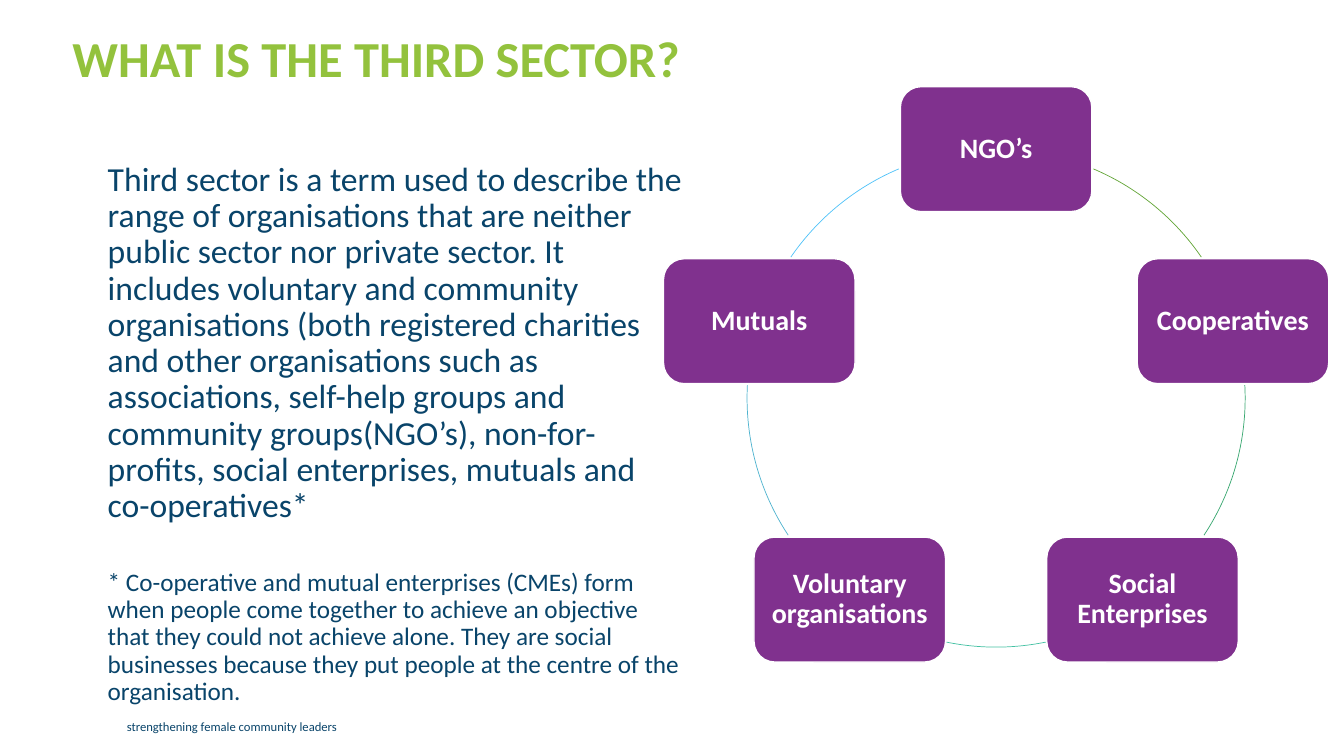
from dataclasses import dataclass
from math import cos, radians, sin

from pptx import Presentation
from pptx.dml.color import RGBColor
from pptx.enum.shapes import MSO_SHAPE
from pptx.enum.text import MSO_ANCHOR, PP_ALIGN
from pptx.util import Inches, Pt

ROUND = MSO_SHAPE.ROUNDED_RECTANGLE
ARC = MSO_SHAPE.ARC
MIDDLE = MSO_ANCHOR.MIDDLE
CENTER = PP_ALIGN.CENTER


@dataclass(frozen=True)
class Theme:
    font: str = "Calibri"
    navy: str = "09446A"
    lime: str = "93C23D"
    plum: str = "80318E"
    white: str = "FFFFFF"
    title: int = 36
    body: int = 24
    label: int = 20
    note: int = 18
    foot: int = 9


THEME = Theme()

TERM = (
    "Third sector is a term used to describe the range of organisations that "
    "are neither public sector nor private sector. It includes voluntary and "
    "community organisations (both registered charities and other "
    "organisations such as associations, self-help groups and community "
    "groups(NGO’s), non-for-profits, social enterprises, mutuals and "
    "co-operatives*"
)
NOTE = (
    "* Co-operative and mutual enterprises (CMEs) form when people come "
    "together to achieve an objective that they could not achieve alone. "
    "They are social businesses because they put people at the centre of the "
    "organisation."
)

# Label, then the arc that follows it: start and end in degrees from the top
RING = [
    ("NGO’s", 23, 55.5, "63A537"),
    ("Cooperatives", 87, 123.4, "37A76F"),
    ("Social Enterprises", 168.5, 191.5, "44C1A3"),
    ("Voluntary organisations", 236.6, 273, "4EB3CF"),
    ("Mutuals", 304.5, 337, "51C3F9"),
]
MID_X, MID_Y, RADIUS = 9.88, 3.95, 2.47
BOX_W, BOX_H = 1.9, 1.24


def rgb(code):
    return RGBColor.from_string(code)


def write(para, text, size, color, bold=False, **layout):
    para.text = text
    for name, value in layout.items():
        setattr(para, name, value)
    style = {"name": THEME.font, "size": Pt(size), "bold": bold}
    for name, value in style.items():
        setattr(para.font, name, value)
    para.font.color.rgb = rgb(color)


def add_text(slide, place, wrap=True):
    frame = slide.shapes.add_textbox(*map(Inches, place)).text_frame
    frame.word_wrap = wrap
    return frame


def add_box(slide, x, y, text):
    box = slide.shapes.add_shape(
        ROUND, Inches(x - BOX_W / 2), Inches(y - BOX_H / 2),
        Inches(BOX_W), Inches(BOX_H))
    box.shadow.inherit = False
    box.fill.solid()
    box.fill.fore_color.rgb = rgb(THEME.plum)
    box.line.color.rgb = rgb(THEME.white)
    box.line.width = Pt(1)
    frame = box.text_frame
    frame.word_wrap = True
    frame.vertical_anchor = MIDDLE
    for side in ("left", "top", "right", "bottom"):
        setattr(frame, f"margin_{side}", Inches(0.08))
    write(frame.paragraphs[0], text, THEME.label, THEME.white, True,
          alignment=CENTER, line_spacing=0.9)


def add_arc(slide, start, end, color):
    arc = slide.shapes.add_shape(
        ARC, Inches(MID_X - RADIUS), Inches(MID_Y - RADIUS),
        Inches(2 * RADIUS), Inches(2 * RADIUS))
    arc.shadow.inherit = False
    arc.fill.background()
    arc.line.color.rgb = rgb(color)
    arc.line.width = Pt(0.5)
    # Arc angles run from the right, in 60000ths of a degree
    for i, turn in enumerate((start, end)):
        arc.adjustments[i] = (turn - 90) % 360 * 0.6


def add_ring(slide):
    step = 360 / len(RING)
    for i, (text, start, end, color) in enumerate(RING):
        turn = radians(i * step)
        add_box(slide, MID_X + RADIUS * sin(turn),
                MID_Y - RADIUS * cos(turn), text)
        add_arc(slide, start, end, color)


def main():
    prs = Presentation()
    prs.slide_width, prs.slide_height = Inches(13.33), Inches(7.5)
    slide = prs.slides.add_slide(prs.slide_layouts[6])

    # Footer
    foot = add_text(slide, (1.16, 7.08, 2.33, 0.25), wrap=False)
    write(foot.paragraphs[0], "strengthening female community leaders",
          THEME.foot, THEME.navy)

    # Definition and footnote
    body = add_text(slide, (0.97, 1.56, 5.89, 5.66))
    write(body.paragraphs[0], TERM, THEME.body, THEME.navy, line_spacing=0.9)
    write(body.add_paragraph(), NOTE, THEME.note, THEME.navy,
          line_spacing=0.9, space_before=Pt(32))

    # Title
    title = add_text(slide, (0.62, 0.29, 7.95, 1.31))
    write(title.paragraphs[0], "WHAT IS THE THIRD SECTOR?", THEME.title,
          THEME.lime, True, line_spacing=0.9)

    # Ring of sector members
    add_ring(slide)

    prs.save("out.pptx")


if __name__ == "__main__":
    main()
